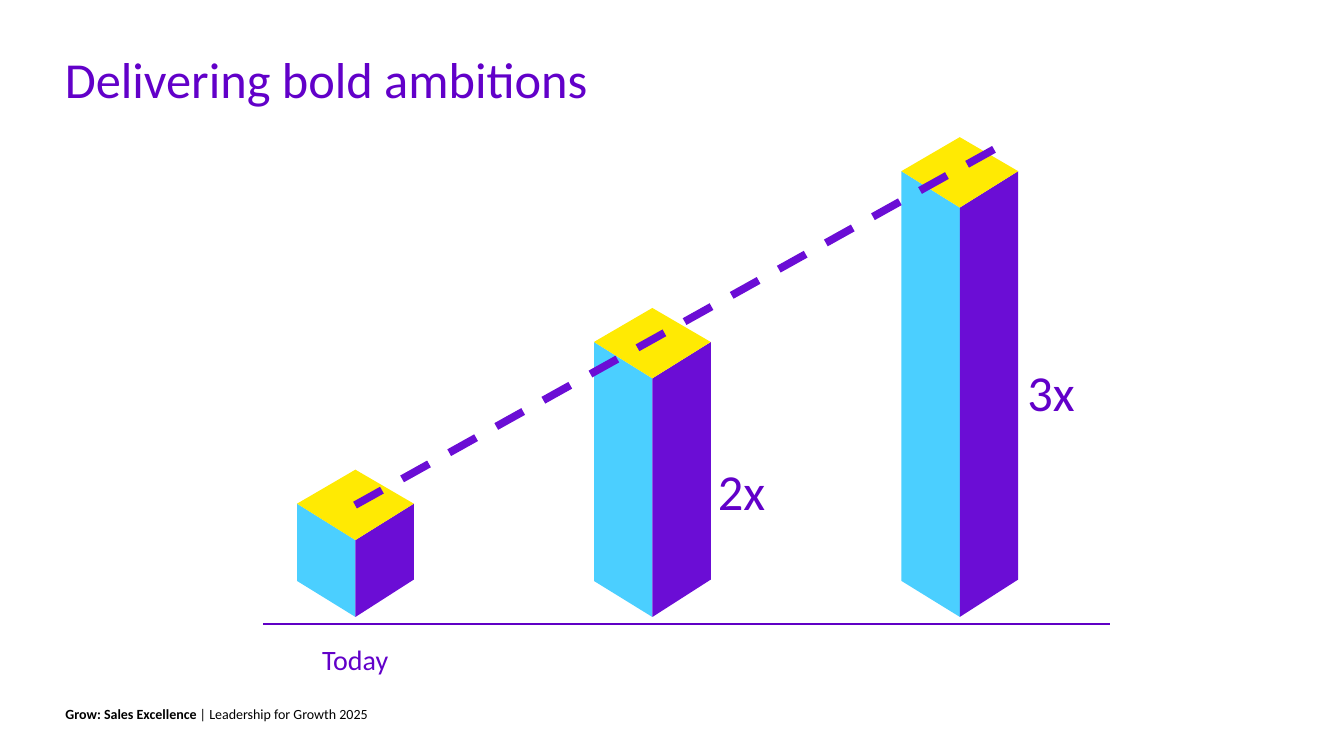
from dataclasses import dataclass
from lxml.etree import SubElement
from pptx import Presentation
from pptx.dml.color import RGBColor
from pptx.enum.dml import MSO_LINE
from pptx.enum.shapes import MSO_CONNECTOR
from pptx.enum.text import MSO_ANCHOR, PP_ALIGN
from pptx.oxml.ns import qn
from pptx.util import Pt


@dataclass(frozen=True)
class Theme:
    face: str = "Calibri"
    ink: str = "6200C9"
    black: str = "000000"
    axis: str = "6000C5"
    left: str = "4BCFFF"
    right: str = "6B0DD5"
    top: str = "FFEA03"
    large: float = 36
    label: float = 20
    small: float = 10


THEME = Theme()


def apply(obj, form):
    for name, value in form.items():
        setattr(obj, name, value)


def text(slide, box, runs, size, color, align=PP_ALIGN.LEFT,
         anchor=MSO_ANCHOR.TOP, base=3.6):
    """Write one line of (words, bold) runs in a box."""
    frame = slide.shapes.add_textbox(*map(Pt, box)).text_frame
    apply(frame, dict(word_wrap=True, vertical_anchor=anchor,
                      margin_left=0, margin_right=0, margin_top=0,
                      margin_bottom=Pt(base)))
    para = frame.paragraphs[0]
    para.alignment = align
    for words, bold in runs:
        run = para.add_run()
        run.text = words
        apply(run.font, dict(name=THEME.face, size=Pt(size), bold=bold))
        run.font.color.rgb = RGBColor.from_string(color)


def line(slide, start, end, color, form):
    link = slide.shapes.add_connector(
        MSO_CONNECTOR.STRAIGHT, *map(Pt, (*start, *end)))
    link.line.color.rgb = RGBColor.from_string(color)
    apply(link.line, form)
    SubElement(link._element.spPr, qn("a:effectLst"))


def face(slide, points, color):
    """Draw one flat side of a pillar."""
    first, *rest = [(Pt(x), Pt(y)) for x, y in points]
    pen = slide.shapes.build_freeform(*first)
    pen.add_line_segments(rest, close=True)
    shape = pen.convert_to_shape()
    shape.shadow.inherit = False
    shape.fill.solid()
    shape.fill.fore_color.rgb = RGBColor.from_string(color)
    shape.line.fill.background()


def pillar(slide, box):
    x, y, width, height = box
    mid, end, foot = x + width / 2, x + width, y + height
    edge, front = y + 24.3, y + 50.3
    face(slide, [(x, edge), (x, foot - 25.7), (mid, foot), (mid, front)],
         THEME.left)
    face(slide, [(mid, foot), (mid, front), (end, edge), (end, foot - 26.7)],
         THEME.right)
    face(slide, [(mid, front), (end, edge), (mid, y), (x, edge)], THEME.top)


def growth(slide, box):
    x, y, width, height = box
    foot = y + height - 4.9

    # Pillars: offset from left, height
    bars = [(24.1, 105.2), (236.2, 220.7), (455.8, 342.7)]
    for shift, tall in bars:
        pillar(slide, (x + shift, foot - tall, 83.4, tall))

    # Trend
    line(slide, (x + 65.5, y + 262.8), (x + 528.5, y + 5), THEME.right,
         dict(width=Pt(5.5), dash_style=MSO_LINE.DASH))

    # Multiples
    for words, shift, drop in [("2x", 324.7, 230.4), ("3x", 545.8, 159.8)]:
        text(slide, (x + shift, y + drop, 78.5, 47.5), [(words, False)],
             THEME.large, THEME.ink)

    # Start label and base line
    text(slide, (x + 5.1, y + height + 13, 121, 28), [("Today", False)],
         THEME.label, THEME.ink, PP_ALIGN.CENTER)
    line(slide, (x, y + height), (x + width, y + height), THEME.axis,
         dict(width=Pt(1.5)))


def title(slide, box):
    text(slide, box, [("Delivering bold ambitions", False)],
         THEME.large, THEME.ink)


def footer(slide, box):
    runs = [("Grow: Sales Excellence ", True),
            ("| Leadership for Growth 2025", False)]
    text(slide, box, runs, THEME.small, THEME.black,
         anchor=MSO_ANCHOR.MIDDLE, base=0)


def main():
    deck = Presentation()
    apply(deck, dict(slide_width=Pt(960), slide_height=Pt(540)))
    slide = deck.slides.add_slide(deck.slide_layouts[6])
    title(slide, (46.3, 34.6, 828, 47.5))
    footer(slide, (46.8, 504, 307.4, 12.2))
    growth(slide, (188.1, 98, 604.6, 347.6))
    deck.save("out.pptx")


if __name__ == "__main__":
    main()
